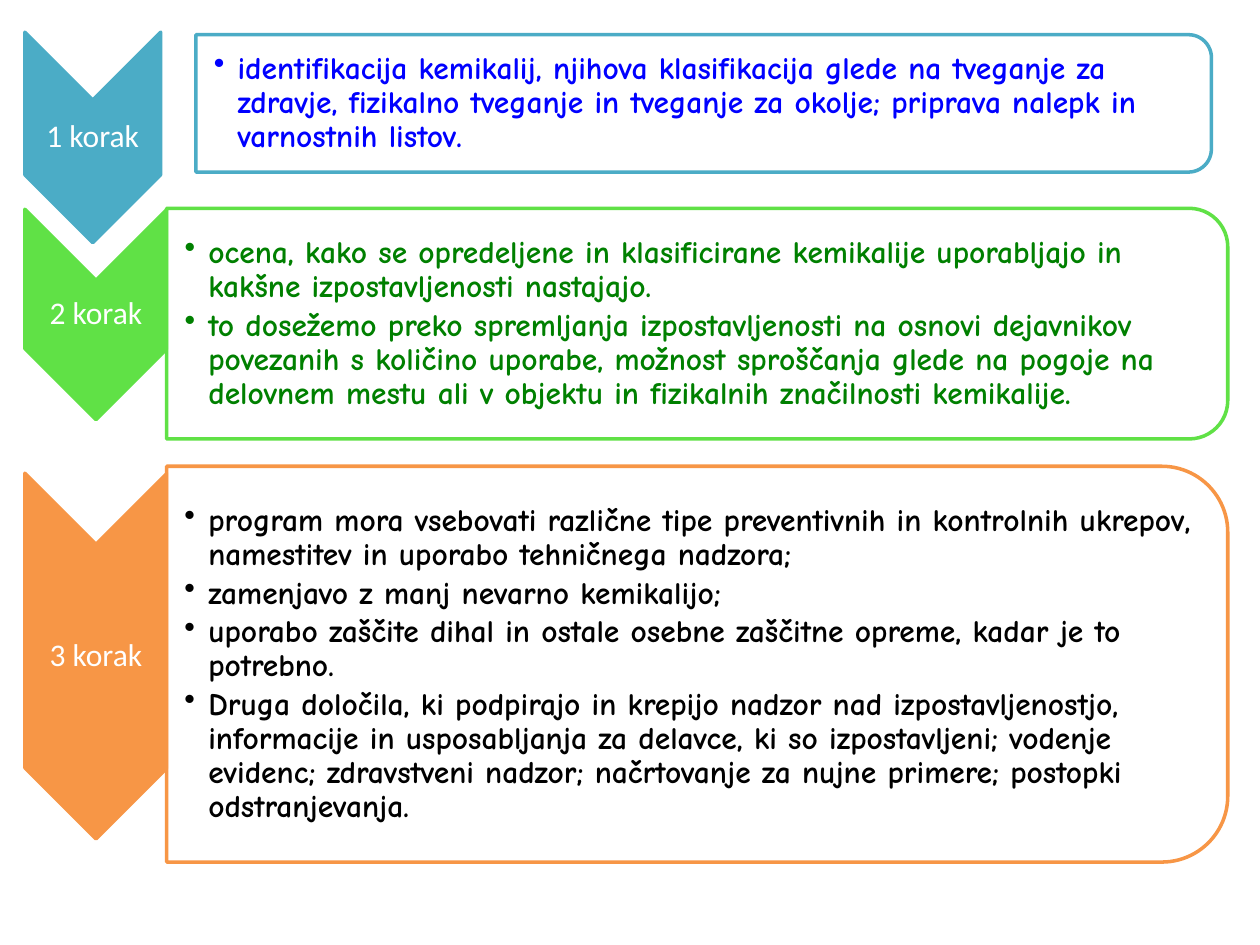
from dataclasses import dataclass

from lxml.etree import SubElement
from pptx import Presentation
from pptx.dml.color import RGBColor
from pptx.enum.shapes import MSO_SHAPE
from pptx.enum.text import MSO_ANCHOR, PP_ALIGN
from pptx.oxml.ns import qn
from pptx.util import Cm, Pt


@dataclass(frozen=True)
class Theme:
    white: str = "FFFFFF"
    blue: str = "4BACC6"
    lime: str = "60E146"
    orange: str = "F79646"
    size: float = 18
    line: float = 2
    label: str = "Calibri"
    body: str = "Comic Neue"


THEME = Theme()
INSET = 0.03
INDENT = 0.48
CORNER = 0.16667 * 0.29  # share of the height that a rounded corner takes from the text

# colour, text colour, arrow (left, top, width, height), card (same), points; in cm
STEPS = [
    (THEME.blue, "0000FF", (0.5, 0.65, 2.74, 4.24), (3.95, 0.7, 20.47, 2.77), [
        "identifikacija kemikalij, njihova klasifikacija glede na tveganje za zdravje, "
        "fizikalno tveganje in tveganje za okolje; priprava nalepk in varnostnih listov.",
    ]),
    (THEME.lime, "008000", (0.5, 4.22, 2.87, 4.24), (3.36, 4.2, 21.39, 4.65), [
        "ocena, kako se opredeljene in klasificirane kemikalije uporabljajo in "
        "kakšne izpostavljenosti nastajajo.",
        "to dosežemo preko spremljanja izpostavljenosti na osnovi dejavnikov povezanih "
        "s količino uporabe, možnost sproščanja glede na pogoje na delovnem mestu ali "
        "v objektu in fizikalnih značilnosti kemikalije.",
    ]),
    (THEME.orange, "000000", (0.5, 9.54, 2.87, 7.37), (3.36, 9.4, 21.39, 7.98), [
        "program mora vsebovati različne tipe preventivnih in kontrolnih ukrepov, "
        "namestitev in uporabo tehničnega nadzora;",
        "zamenjavo z manj nevarno kemikalijo;",
        "uporabo zaščite dihal in ostale osebne zaščitne opreme, kadar je to potrebno.",
        "Druga določila, ki podpirajo in krepijo nadzor nad izpostavljenostjo, "
        "informacije in usposabljanja za delavce, ki so izpostavljeni; vodenje evidenc; "
        "zdravstveni nadzor; načrtovanje za nujne primere; postopki odstranjevanja.",
    ]),
]


def apply(item, values):
    for name, value in values.items():
        setattr(item, name, value)


def add_turned(slide, kind, frame, fill, line):
    """Add a shape turned by 90 degrees that covers the given frame."""
    left, top, width, height = frame
    shift = (width - height) / 2
    shape = slide.shapes.add_shape(
        kind, Cm(left + shift), Cm(top - shift), Cm(height), Cm(width))
    shape.rotation = 90
    shape.shadow.inherit = False
    shape.fill.solid()
    shape.fill.fore_color.rgb = RGBColor.from_string(fill)
    shape.line.color.rgb = RGBColor.from_string(line)
    shape.line.width = Pt(THEME.line)
    return shape


def add_text(slide, frame, lines, font, form, inset=INSET):
    """Add a centred-height text box and return its paragraphs."""
    box = slide.shapes.add_textbox(*map(Cm, frame)).text_frame
    apply(box, {
        "word_wrap": True, "vertical_anchor": MSO_ANCHOR.MIDDLE,
        "margin_left": Cm(inset), "margin_right": Cm(INSET),
        "margin_top": Cm(INSET), "margin_bottom": Cm(INSET),
    })
    name, color, bold = font
    for num, line in enumerate(lines):
        para = box.add_paragraph() if num else box.paragraphs[0]
        apply(para, {"line_spacing": 0.9, **form})
        run = para.add_run()
        run.text = line
        apply(run.font, {"name": name, "size": Pt(THEME.size), "bold": bold})
        run.font.color.rgb = RGBColor.from_string(color)
    return box.paragraphs


def add_bullet(para):
    props = para._p.get_or_add_pPr()
    props.set("marL", str(Cm(INDENT)))
    props.set("indent", str(-Cm(INDENT)))
    SubElement(props, qn("a:buChar")).set("char", "•")


def add_arrow(slide, frame, color, label):
    add_turned(slide, MSO_SHAPE.CHEVRON, frame, color, color)
    left, top, width, height = frame
    area = (left, top + width / 2, width, height - width)
    add_text(slide, area, [label], (THEME.label, THEME.white, False),
             {"alignment": PP_ALIGN.CENTER, "space_after": Pt(THEME.size * 0.35)})


def add_card(slide, frame, color, ink, points):
    card = add_turned(slide, MSO_SHAPE.ROUND_2_SAME_RECTANGLE, frame, THEME.white, color)
    tint = card.fill._xPr.find(".//" + qn("a:srgbClr"))
    SubElement(tint, qn("a:alpha")).set("val", "90000")
    left, top, width, height = frame
    trim = height * CORNER
    area = (left, top + trim, width - trim, height - 2 * trim)
    form = {"level": 1, "alignment": PP_ALIGN.LEFT, "space_after": Pt(THEME.size * 0.15)}
    for para in add_text(slide, area, points, (THEME.body, ink, True), form, 0.36):
        add_bullet(para)


def main():
    deck = Presentation()
    apply(deck, {"slide_width": Cm(25.4), "slide_height": Cm(19.05)})
    slide = deck.slides.add_slide(deck.slide_layouts[6])
    for num, (color, ink, arrow, card, points) in enumerate(STEPS, 1):
        add_arrow(slide, arrow, color, f"{num} korak")
        add_card(slide, card, color, ink, points)
    deck.save("out.pptx")


if __name__ == "__main__":
    main()
